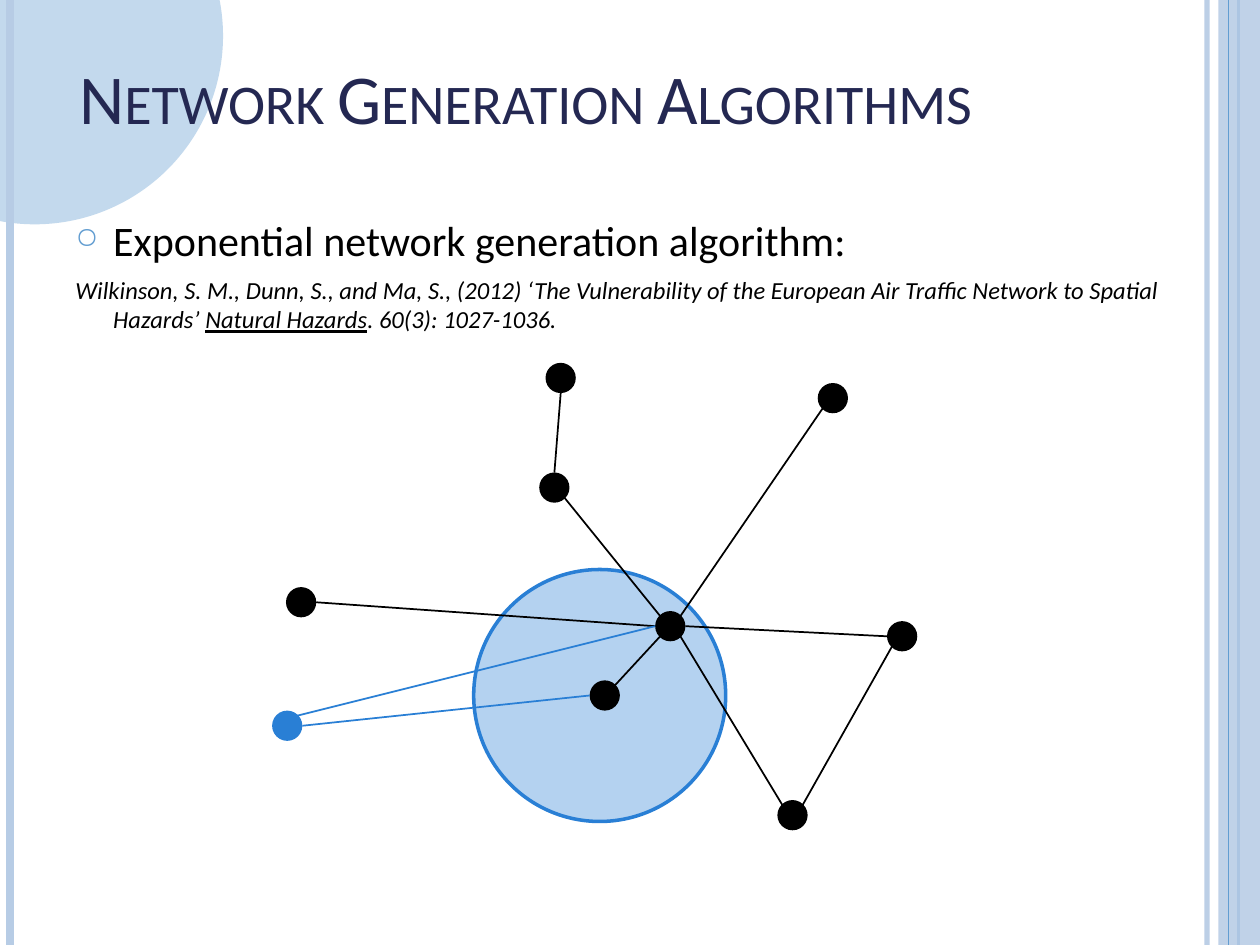
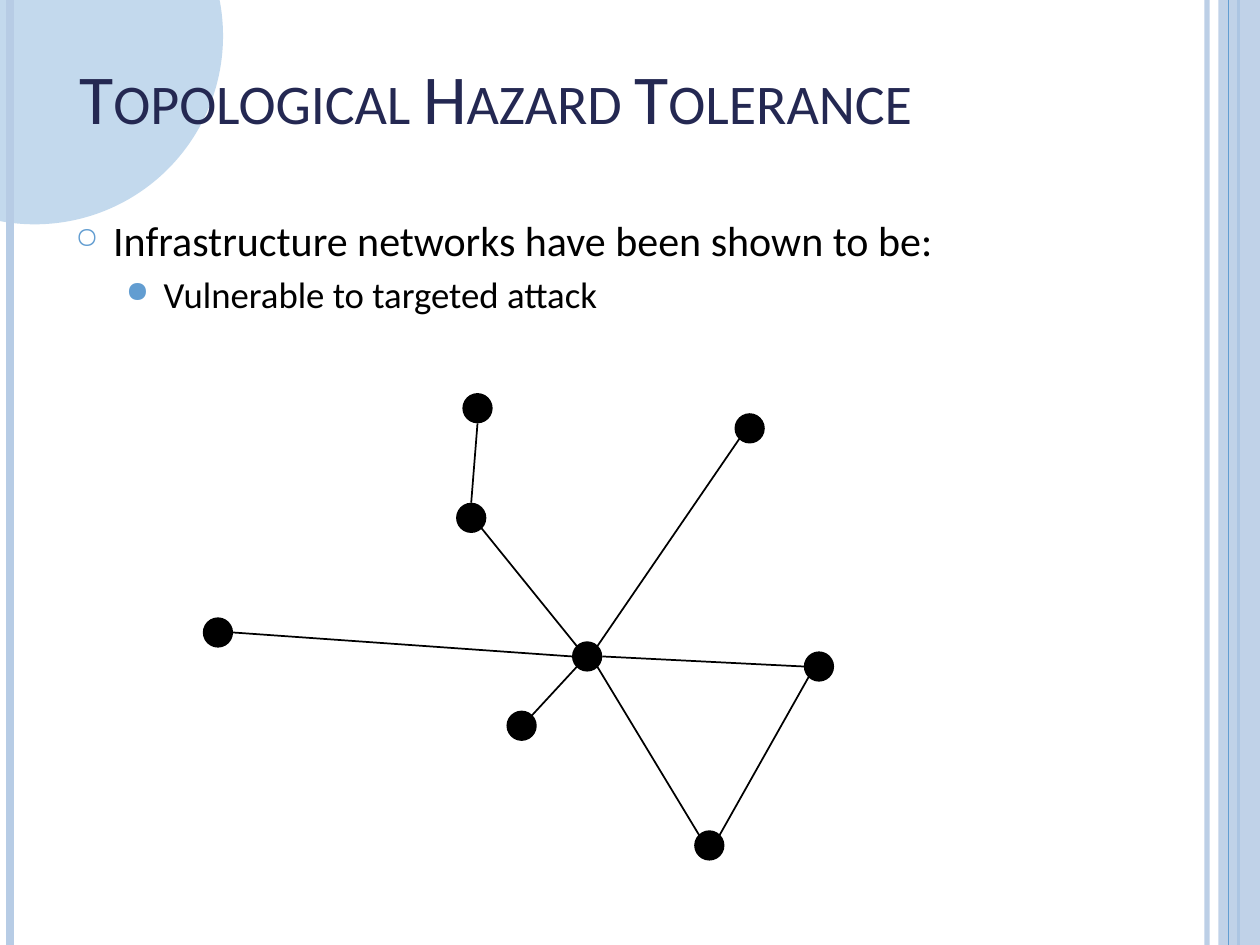
from dataclasses import dataclass
from math import cos, radians, sin

from lxml import etree
from pptx import Presentation
from pptx import util as u
from pptx.dml.color import RGBColor
from pptx.enum import shapes, text
from pptx.oxml import ns

SCALE = u.Inches(1) // 100
WIDTH, HEIGHT = 1000, 750
NODE = 24
COMPASS = {"E": 0, "SE": 45, "S": 90, "SW": 135, "W": 180, "NW": 225, "N": 270, "NE": 315}

NODES = {
    "top": (433, 288),
    "far": (649, 304),
    "upper": (428, 375),
    "west": (227, 466),
    "hub": (520, 485),
    "inner": (468, 540),
    "east": (704, 493),
    "south": (617, 635),
}
EDGES = [
    ("hub", "SE", "south", "NW"),
    ("east", "SW", "south", "NE"),
    ("hub", "E", "east", "W"),
    ("hub", "SW", "inner", "NE"),
    ("hub", "W", "west", "E"),
    ("hub", "NW", "upper", "SE"),
    ("far", "SW", "hub", "NE"),
    ("top", "S", "upper", "N"),
]
NEW_NODE = {"new": (216, 564)}
NEW_EDGES = [("hub", "W", "new", "NE"), ("inner", "W", "new", "E")]


@dataclass(frozen=True)
class Theme:
    """Colours, font and type sizes of the deck."""

    font: str = "Calibri"
    ink: str = "000000"
    heading: str = "242852"
    accent: str = "629DD1"
    band: str = "B7CCE5"
    highlight: str = "297FD5"
    title_size: int = 40
    point_size: int = 24
    subpoint_size: int = 21
    citation_size: int = 14


class Deck:
    """Holds the style and the current page, and draws each kind of element."""

    def __init__(self, theme):
        """Start an empty deck with the shared decoration on its layout."""
        self.theme = theme
        self.file = Presentation()
        self.file.slide_width, self.file.slide_height = WIDTH * SCALE, HEIGHT * SCALE
        self.layout = self.file.slide_layouts[5]
        self.page = None

    def start_page(self, title):
        """Add a titled page, decorating the layout on the first one."""
        first = self.page is None
        self.page = self.file.slides.add_slide(self.layout)
        if first:
            self.decorate_layout()
        box = self.page.shapes.title
        box.left, box.top, box.width, box.height = (n * SCALE for n in (53, 44, 903, 71))
        frame = box.text_frame
        frame.text = title
        frame.auto_size = text.MSO_AUTO_SIZE.NONE
        frame.vertical_anchor = text.MSO_ANCHOR.BOTTOM
        para = frame.paragraphs[0]
        para.alignment = text.PP_ALIGN.LEFT
        self.style(para, self.theme.title_size, self.theme.heading)
        para.font._element.set("cap", "small")

    def decorate_layout(self):
        """Draw the corner circle and edge bands and move them to the layout."""
        theme = self.theme
        for placeholder in list(self.layout.placeholders)[1:]:
            self.layout.shapes._spTree.remove(placeholder._element)
        circle, band = shapes.MSO_SHAPE.OVAL, shapes.MSO_SHAPE.RECTANGLE
        decoration = [
            self.shape(circle, (-122, -121, 299, 299), theme.accent, 38),
            self.rule(958, theme.band, 3, 93),
            self.rule(8, theme.band, 4.5),
            self.rule(983, theme.accent, 1.5),
            self.shape(band, (967, 0, 33, HEIGHT), theme.band, 87),
            self.rule(975, theme.accent, 0.75),
        ]
        for item in decoration:
            self.layout.shapes._spTree.append(item._element)

    def fade(self, item, opacity):
        """Make the first colour of an element partly transparent."""
        color = item._element.spPr.find(".//" + ns.qn("a:srgbClr"))
        etree.SubElement(color, ns.qn("a:alpha"), val=str(opacity * 1000))

    def shape(self, kind, place, color, opacity=100, outline=None):
        """Draw a flat preset shape, with an outline if a colour is given."""
        item = self.page.shapes.add_shape(kind, *(n * SCALE for n in place))
        item.shadow.inherit = False
        item.fill.solid()
        item.fill.fore_color.rgb = RGBColor.from_string(color)
        if opacity < 100:
            self.fade(item, opacity)
        if outline:
            item.line.color.rgb = RGBColor.from_string(outline)
            item.line.width = u.Pt(2)
        else:
            item.line.fill.background()
        return item

    def line(self, start, end, color, weight=1, opacity=100):
        """Draw a straight line between two points."""
        ends = (n * SCALE for n in (*start, *end))
        item = self.page.shapes.add_connector(shapes.MSO_CONNECTOR.STRAIGHT, *ends)
        item.line.color.rgb = RGBColor.from_string(color)
        item.line.width = u.Pt(weight)
        if opacity < 100:
            self.fade(item, opacity)
        etree.SubElement(item._element.spPr, ns.qn("a:effectLst"))
        return item

    def rule(self, x, color, weight, opacity=100):
        """Draw a line down the full height of the page."""
        return self.line((x, 0), (x, HEIGHT), color, weight, opacity)

    def style(self, para, size, color):
        """Set the font of a whole paragraph."""
        para.font.name = self.theme.font
        para.font.size = u.Pt(size)
        para.font.color.rgb = RGBColor.from_string(color)

    def body(self):
        """Add the body text box and return its frame."""
        box = self.page.shapes.add_textbox(*(n * SCALE for n in (50, 165, 891, 533)))
        box.text_frame.word_wrap = True
        return box.text_frame

    def paragraph(self, para, spans, size, indent=30, before=6, bullet=None, bullet_size=100):
        """Fill a hanging paragraph, with a bullet if one is given."""
        para.space_before = u.Pt(before)
        props = para._p.get_or_add_pPr()
        props.set("marL", str(indent * SCALE))
        props.set("indent", str(-30 * SCALE))
        if bullet:
            color = etree.SubElement(props, ns.qn("a:buClr"))
            etree.SubElement(color, ns.qn("a:srgbClr"), val=self.theme.accent)
            etree.SubElement(props, ns.qn("a:buSzPct"), val=str(bullet_size * 1000))
            etree.SubElement(props, ns.qn("a:buChar"), char=bullet)
        self.style(para, size, self.theme.ink)
        for words in spans:
            para.add_run().text = words

    def point(self, frame, words):
        """Write the main point in the first paragraph."""
        size = self.theme.point_size
        self.paragraph(frame.paragraphs[0], [words], size, bullet="○", bullet_size=70)

    def subpoint(self, frame, words):
        """Add a second-level point."""
        size = self.theme.subpoint_size
        self.paragraph(frame.add_paragraph(), [words], size, 70, 4, "●", 80)

    def citation(self, frame, before, journal, after):
        """Add a reference in italics with the journal underlined."""
        para = frame.add_paragraph()
        self.paragraph(para, [before, journal, after], self.theme.citation_size)
        para.font.italic = True
        para.runs[1].font.underline = True

    def nodes(self, places, color, shift=(0, 0)):
        """Draw the nodes of a network."""
        for x, y in places.values():
            place = (x + shift[0], y + shift[1], NODE, NODE)
            self.shape(shapes.MSO_SHAPE.OVAL, place, color)

    def edges(self, places, links, color, shift=(0, 0)):
        """Join nodes at the named compass points of their rims."""

        def rim(name, side):
            """Find a point on the rim of a node."""
            angle, radius = radians(COMPASS[side]), NODE / 2
            turns = (cos(angle), sin(angle))
            return [round(n + s + radius + radius * t)
                    for n, s, t in zip(places[name], shift, turns)]

        for source, source_side, target, target_side in links:
            self.line(rim(source, source_side), rim(target, target_side), color)


def generation_page(deck):
    """Build the page on how a new node joins the network."""
    theme = deck.theme
    deck.start_page("Network Generation Algorithms")
    frame = deck.body()
    deck.point(frame, "Exponential network generation algorithm:")
    deck.citation(
        frame,
        "Wilkinson, S. M., Dunn, S., and Ma, S., (2012) ‘The Vulnerability of the "
        "European Air Traffic Network to Spatial Hazards’ ",
        "Natural Hazards",
        ". 60(3): 1027-1036.",
    )
    reach = (376, 452, 200, 200)
    deck.shape(shapes.MSO_SHAPE.OVAL, reach, theme.highlight, 35, theme.highlight)
    deck.nodes(NODES, theme.ink)
    deck.edges(NODES, EDGES, theme.ink)
    deck.nodes(NEW_NODE, theme.highlight)
    deck.edges(NODES | NEW_NODE, NEW_EDGES, theme.highlight)


def tolerance_page(deck):
    """Build the page on how networks withstand hazards."""
    shift = (-66, 24)
    deck.start_page("Topological Hazard Tolerance")
    frame = deck.body()
    deck.point(frame, "Infrastructure networks have been shown to be:")
    deck.subpoint(frame, "Vulnerable to targeted attack")
    deck.nodes(NODES, deck.theme.ink, shift)
    deck.edges(NODES, EDGES, deck.theme.ink, shift)


def main():
    """Build and save the deck."""
    deck = Deck(Theme())
    generation_page(deck)
    tolerance_page(deck)
    deck.file.save("out.pptx")


if __name__ == "__main__":
    main()
